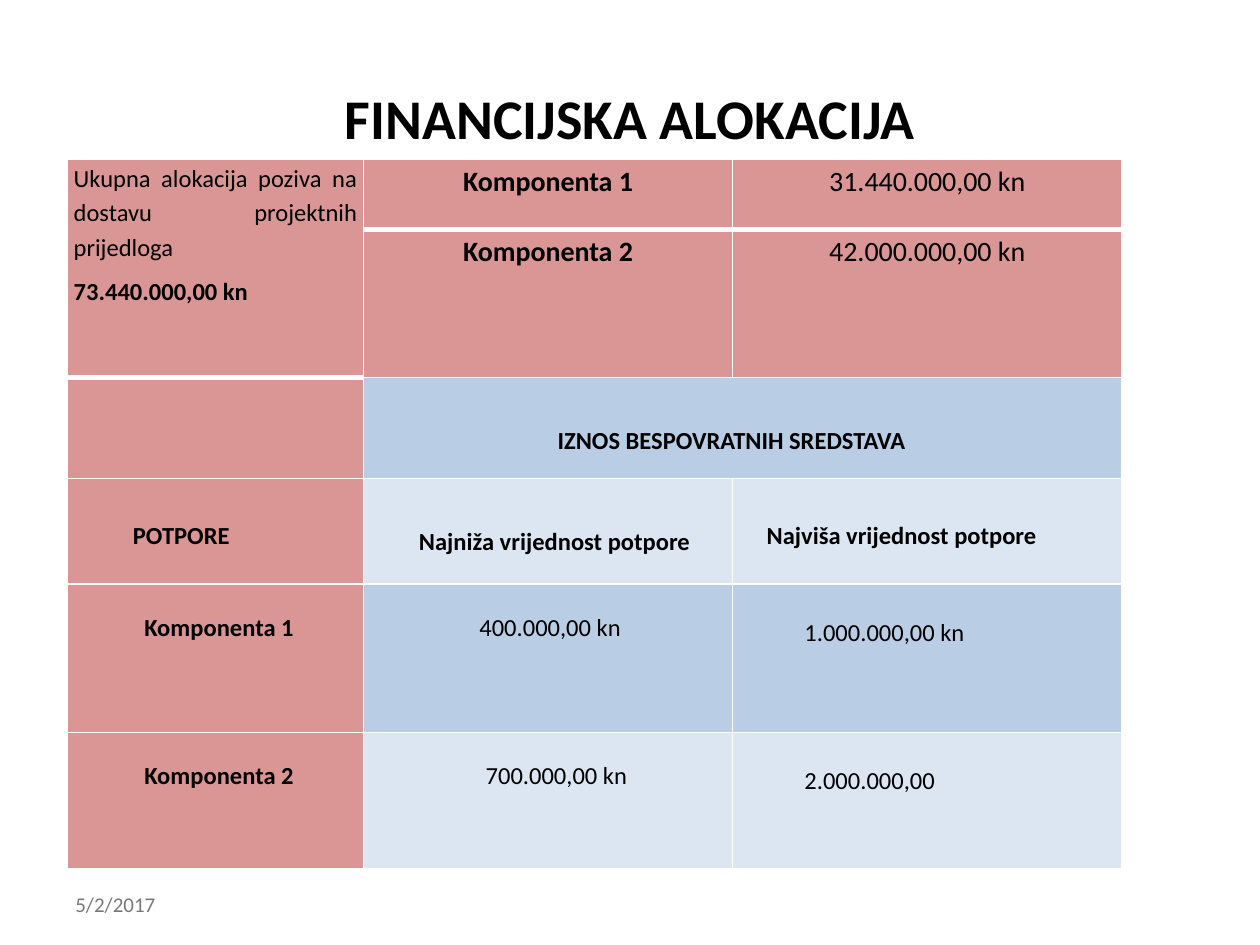
"""Build the financial allocation slide with its table of grants."""
from dataclasses import dataclass
from itertools import product

from lxml.etree import SubElement
from pptx import Presentation
from pptx.dml.color import RGBColor
from pptx.enum.text import MSO_ANCHOR, PP_ALIGN
from pptx.oxml.ns import qn
from pptx.util import Inches, Pt

WIDTH, HEIGHT = 10, 7.5
COLS = (23.5, 29.3, 30.9)
ROWS = (7.4, 15.6, 10.7, 11.2, 15.7, 14.4)
RED, BLUE, PALE, WHITE = "D99694", "B9CDE5", "DCE6F2", "FFFFFF"
FILLS = (
    (RED, RED, RED),
    (RED, RED, RED),
    (RED, BLUE, BLUE),
    (RED, PALE, PALE),
    (RED, BLUE, BLUE),
    (RED, PALE, PALE),
)
MERGES = (((0, 0), (1, 0)), ((2, 1), (2, 2)))
THICK_BELOW = {(0, 1), (0, 2), (1, 0)}


@dataclass(frozen=True)
class Entry:
    """Text of a table cell, with its indent and drop in percent of the slide."""
    row: int
    col: int
    text: str
    bold: bool = False
    indent: float = 0.5
    drop: float = 0
    size: int = 14
    align: PP_ALIGN = PP_ALIGN.LEFT


ENTRIES = (
    Entry(0, 0, "Ukupna alokacija poziva na dostavu projektnih prijedloga",
          align=PP_ALIGN.JUSTIFY),
    Entry(0, 0, "73.440.000,00 kn", True),
    Entry(0, 1, "Komponenta 1", True, size=16, align=PP_ALIGN.CENTER),
    Entry(0, 2, "31.440.000,00 kn", size=16, align=PP_ALIGN.CENTER),
    Entry(1, 1, "Komponenta 2", True, size=16, align=PP_ALIGN.CENTER),
    Entry(1, 2, "42.000.000,00 kn", size=16, align=PP_ALIGN.CENTER),
    Entry(2, 1, "IZNOS BESPOVRATNIH SREDSTAVA", True, 15.4, 4.7),
    Entry(3, 0, "POTPORE", True, 5.2, 4.1),
    Entry(3, 1, "Najniža vrijednost potpore", True, 4.4, 4.7),
    Entry(3, 2, "Najviša vrijednost potpore", True, 2.7, 4.1),
    Entry(4, 0, "Komponenta 1", True, 6.1, 2.6),
    Entry(4, 1, "400.000,00 kn", False, 9.2, 2.6),
    Entry(4, 2, "1.000.000,00 kn", False, 5.7, 3.1),
    Entry(5, 0, "Komponenta 2", True, 6.1, 2.6),
    Entry(5, 1, "700.000,00 kn", False, 9.7, 2.6),
    Entry(5, 2, "2.000.000,00", False, 5.7, 3.1),
)


def across(percent: float) -> int:
    """Return a share of the slide width."""
    return Inches(WIDTH * percent / 100)


def down(percent: float) -> int:
    """Return a share of the slide height."""
    return Inches(HEIGHT * percent / 100)


def rgb(color: str) -> RGBColor:
    """Return a colour from its hex string."""
    return RGBColor.from_string(color)


def write(tf, text: str, *, size: int, bold: bool = False, color: str = "000000",
          align: PP_ALIGN = PP_ALIGN.LEFT, spacing: float = 1) -> None:
    """Fill the first paragraph, or add one when the frame has text."""
    if tf.text:
        p = tf.add_paragraph()
        p.space_before = Pt(6)
    else:
        p = tf.paragraphs[0]
    p.alignment, p.line_spacing = align, spacing
    r = p.add_run()
    r.text = text
    r.font.name, r.font.size, r.font.bold = "Calibri", Pt(size), bold
    r.font.color.rgb = rgb(color)


def add_border(cell, side: str, points: float) -> None:
    """Draw one white edge of a cell."""
    ln = SubElement(cell._tc.get_or_add_tcPr(), qn(f"a:ln{side}"), w=str(Pt(points)))
    SubElement(SubElement(ln, qn("a:solidFill")), qn("a:srgbClr"), val=WHITE)


def add_allocation_table(slide) -> None:
    """Add the table, then its edges, fills and entries."""
    frame = slide.shapes.add_table(len(ROWS), len(COLS), across(5.35), down(16.9),
                                   across(sum(COLS)), down(sum(ROWS)))
    table = frame.table
    table.first_row = table.horz_banding = False
    for column, share in zip(table.columns, COLS):
        column.width = across(share)
    for row, share in zip(table.rows, ROWS):
        row.height = down(share)
    for start, end in MERGES:
        table.cell(*start).merge(table.cell(*end))
    for row, col in product(range(len(ROWS)), range(len(COLS))):
        cell = table.cell(row, col)
        below = 3 if (row, col) in THICK_BELOW or (row, col) == (0, 0) else 1
        above = 3 if (row - 1, col) in THICK_BELOW else 1
        for side, points in (("L", 1), ("R", 1), ("T", above), ("B", below)):
            add_border(cell, side, points)
        cell.fill.solid()
        cell.fill.fore_color.rgb = rgb(FILLS[row][col])
        cell.margin_top = cell.margin_bottom = 0
        cell.margin_left = cell.margin_right = across(0.5)
    for entry in ENTRIES:
        cell = table.cell(entry.row, entry.col)
        cell.margin_left, cell.margin_top = across(entry.indent), down(entry.drop)
        write(cell.text_frame, entry.text, size=entry.size, bold=entry.bold,
              align=entry.align, spacing=1.15)


def main() -> None:
    """Build and save the slide."""
    prs = Presentation()
    prs.slide_width, prs.slide_height = Inches(WIDTH), Inches(HEIGHT)
    slide = prs.slides.add_slide(prs.slide_layouts[5])
    title = slide.shapes.title
    title.left, title.top = across(5), down(4)
    title.width, title.height = across(90), down(16.7)
    title.text_frame.vertical_anchor = MSO_ANCHOR.MIDDLE
    write(title.text_frame, "FINANCIJSKA ALOKACIJA", size=32, bold=True,
          align=PP_ALIGN.CENTER)
    add_allocation_table(slide)
    date = slide.shapes.add_textbox(across(5), down(93), across(23.3), down(5.3))
    date.text_frame.word_wrap = True
    date.text_frame.vertical_anchor = MSO_ANCHOR.MIDDLE
    write(date.text_frame, "5/2/2017", size=12, color="777877")
    prs.save("out.pptx")


if __name__ == "__main__":
    main()
